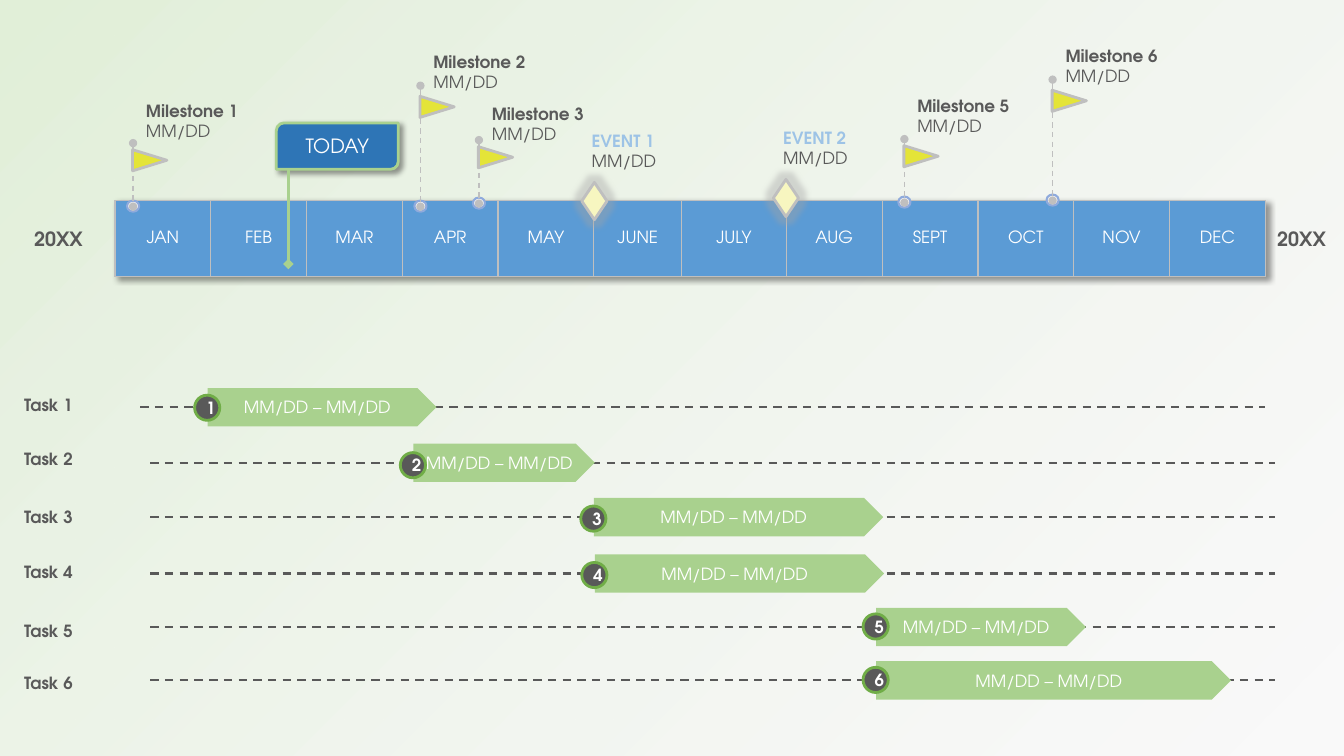
import pptx
import pptx.util
import pptx.oxml
import pptx.oxml.ns
import pptx.dml.color
import pptx.enum.dml
import pptx.enum.shapes
import pptx.enum.text

PX = 9144
FONT = "TeX Gyre Adventor"
GREY, PALE, WHITE, LEAF, SKY = "595959", "BFBFBF", "FFFFFF", "A9D18E", "9DC3E6"
DATE = "MM/DD"
SPAN = "MM/DD – MM/DD"

MONTHS = ["JAN", "FEB", "MAR", "APR", "MAY", "JUNE", "JULY", "AUG",
          "SEPT", "OCT", "NOV", "DEC"]
WIDTHS = {"JUNE": 87, "JULY": 104}
BAND = (114, 199, 75)
YEARS = [("20XX", 23), ("20XX", 1256)]
# name, pin x, pin top, pin end, label top
PINS = [
    ("Milestone 1", 132, 142, 205, 95),
    ("Milestone 2", 417, 85, 205, 46),
    ("Milestone 3", 475, 139, 202, 98),
    ("Milestone 5", 897, 138, 201, 90),
    ("Milestone 6", 1044, 79, 199, 40),
]
EVENTS = [("EVENT 1", 571, 187), ("EVENT 2", 761, 184)]
TASKS = [
    {"name": "Task 1", "row": 404, "bar": (206, 227), "disc": 392, "label": 387, "start": 139},
    {"name": "Task 2", "row": 459, "bar": (410, 180), "disc": 449, "label": 440, "start": 149},
    {"name": "Task 3", "row": 513, "bar": (589, 287), "disc": 502, "label": 498, "start": 149},
    {"name": "Task 4", "row": 569, "bar": (590, 287), "disc": 558, "label": 552, "start": 149},
    {"name": "Task 5", "row": 622, "bar": (869, 208), "disc": 609, "label": 611, "start": 149},
    {"name": "Task 6", "row": 675, "bar": (869, 352), "disc": 662, "label": 662, "start": 149},
]

KIND = pptx.enum.shapes.MSO_SHAPE
DASH = pptx.enum.dml.MSO_LINE.DASH
ALIGN = pptx.enum.text.PP_ALIGN
MID = pptx.enum.text.MSO_ANCHOR.MIDDLE
GROW = pptx.enum.text.MSO_AUTO_SIZE.SHAPE_TO_FIT_TEXT
NS = 'xmlns:a="http://schemas.openxmlformats.org/drawingml/2006/main"'


def rgb(code):
    return pptx.dml.color.RGBColor.from_string(code)


def node(text):
    return pptx.oxml.parse_xml(text.replace(" ", f" {NS} ", 1))


def shade(blur, dist, alpha):
    return node(f'<a:outerShdw blurRad="{blur * 12700}" dist="{dist * 12700}" '
                f'dir="2700000" algn="tl" rotWithShape="0"><a:srgbClr val="000000">'
                f'<a:alpha val="{alpha * 1000}"/></a:srgbClr></a:outerShdw>')


def put(thing, values):
    for key, value in values.items():
        setattr(thing, key, value)


def ink(line, tint, width, dash=None):
    line.color.rgb = rgb(tint)
    put(line, {"width": pptx.util.Pt(width), "dash_style": dash})


def write(frame, rows, align=ALIGN.LEFT):
    for i, (text, size, tint, bold) in enumerate(rows):
        para = frame.paragraphs[0] if i == 0 else frame.add_paragraph()
        para.alignment = align
        run = para.add_run()
        run.text = text
        put(run.font, {"name": FONT, "size": pptx.util.Pt(size), "bold": bold})
        run.font.color.rgb = rgb(tint)


def shape(home, kind, box, fill=None, line=None, rows=(), effect=None, turn=0):
    item = home.add_shape(kind, *(n * PX for n in box))
    put(item, {"rotation": turn})
    item.shadow.inherit = False
    if fill:
        item.fill.solid()
        item.fill.fore_color.rgb = rgb(fill)
    if line:
        ink(item.line, *line)
    else:
        item.line.fill.background()
    if effect is not None:
        item._element.spPr.find(pptx.oxml.ns.qn("a:effectLst")).append(effect)
    if rows:
        item.text_frame.vertical_anchor = MID
        write(item.text_frame, rows, ALIGN.CENTER)
    return item


def link(home, ends, line, head=None, tail=None):
    item = home.add_connector(pptx.enum.shapes.MSO_CONNECTOR.STRAIGHT,
                              *(n * PX for n in ends))
    ink(item.line, *line)
    for tag, tip in (("headEnd", head), ("tailEnd", tail)):
        if tip:
            item.line._get_or_add_ln().append(node(f'<a:{tag} type="{tip}"/>'))
    item._element.spPr.append(node("<a:effectLst />"))


def label(home, box, rows, align=ALIGN.LEFT, grow=False):
    frame = home.add_textbox(*(n * PX for n in box)).text_frame
    put(frame, {"word_wrap": True})
    write(frame, rows, align)
    if grow:
        put(frame, {"auto_size": GROW})


def paint(home):
    back = shape(home, KIND.RECTANGLE, (0, 0, 1333, 750))
    back.fill.gradient()
    back.fill.gradient_angle = 135
    for stop, tint in zip(back.fill.gradient_stops, ("F2F2F2", "E2F0D9")):
        stop.color.rgb = rgb(tint)
    first = back._element.spPr.find(".//" + pptx.oxml.ns.qn("a:srgbClr"))
    first.append(node('<a:alpha val="40000"/>'))


def year(home):
    left, top, high = BAND
    sizes = [WIDTHS.get(name, 95) for name in MONTHS]
    grid = home.add_table(1, len(MONTHS), left * PX, top * PX,
                          sum(sizes) * PX, high * PX).table
    put(grid, {"first_row": False, "horz_banding": False})
    glow = node("<a:effectLst />")
    glow.append(shade(4, 3, 40))
    grid._tbl.tblPr.insert(0, glow)
    for i, (name, size) in enumerate(zip(MONTHS, sizes)):
        grid.columns[i].width = size * PX
        cell = grid.cell(0, i)
        cell.vertical_anchor = MID
        cell.fill.solid()
        cell.fill.fore_color.rgb = rgb("5B9BD5")
        write(cell.text_frame, [(name, 12, WHITE, False)], ALIGN.CENTER)
        for spot, side in enumerate("LRTB"):
            cell._tc.tcPr.insert(spot, node(
                f'<a:ln{side} w="12700"><a:solidFill><a:srgbClr val="{PALE}"/>'
                f'</a:solidFill></a:ln{side}>'))


def today(home):
    team = home.add_group_shape().shapes
    shape(team, KIND.ROUND_2_DIAG_RECTANGLE, (274, 122, 121, 46), "2E75B6", (LEAF, 2),
          [("TODAY", 14, WHITE, False)], shade(4, 3, 40))
    link(team, (286, 168, 286, 262), (LEAF, 2.5), tail="diamond")


def pin(home, name, x, top, end, high):
    label(home, (x + 3, high, 190, 49),
          [(name, 12, GREY, True), (DATE, 12, GREY, False)])
    team = home.add_group_shape().shapes
    shape(team, KIND.OVAL, (x - 6, end - 6, 12, 11), "F2F2F2", ("8FAADC", 1.5))
    link(team, (x, top, x, end), (PALE, 1, DASH), "oval", "oval")
    drop = 4 if end - top > 100 else 0
    shape(team, KIND.ISOSCELES_TRIANGLE, (x + 6, top + drop, 21, 34), "E4E438",
          (PALE, 2), turn=90)


def event(home, name, x, y):
    halo = node('<a:glow rad="101600"><a:srgbClr val="A5A5A5">'
                '<a:alpha val="40000"/></a:srgbClr></a:glow>')
    shape(home, KIND.FLOWCHART_DECISION, (x, y, 37, 25), "F7F6C0", (PALE, 2),
          effect=halo, turn=90)
    label(home, (x + 6, y - 62, 190, 44),
          [(name, 12, SKY, True), (DATE, 12, GREY, False)])


def main():
    deck = pptx.Presentation()
    put(deck, {"slide_width": 1333 * PX, "slide_height": 750 * PX})
    home = deck.slides.add_slide(deck.slide_layouts[6]).shapes
    paint(home)
    for task in TASKS:
        x, y = task["start"], task["row"]
        link(home, (x, y, x + 1116, y), (GREY, 1.5, DASH))
    year(home)
    today(home)
    for text, x in YEARS:
        label(home, (x, 220, 70, 34), [(text, 14, GREY, True)], ALIGN.CENTER, True)
    for item in PINS:
        pin(home, *item)
    for item in EVENTS:
        event(home, *item)
    for i, task in enumerate(TASKS, 1):
        x, wide = task["bar"]
        shape(home, KIND.PENTAGON, (x, task["row"] - 19, wide, 38), LEAF,
              rows=[(SPAN, 12, WHITE, False)])
        label(home, (14, task["label"], 172, 30),
              [(task["name"], 12, GREY, True)], grow=True)
        shape(home, KIND.OVAL, (x - 13, task["disc"], 25, 25), GREY, ("70AD47", 2),
              [(str(i), 12, WHITE, True)])
    deck.save("out.pptx")


if __name__ == "__main__":
    main()
